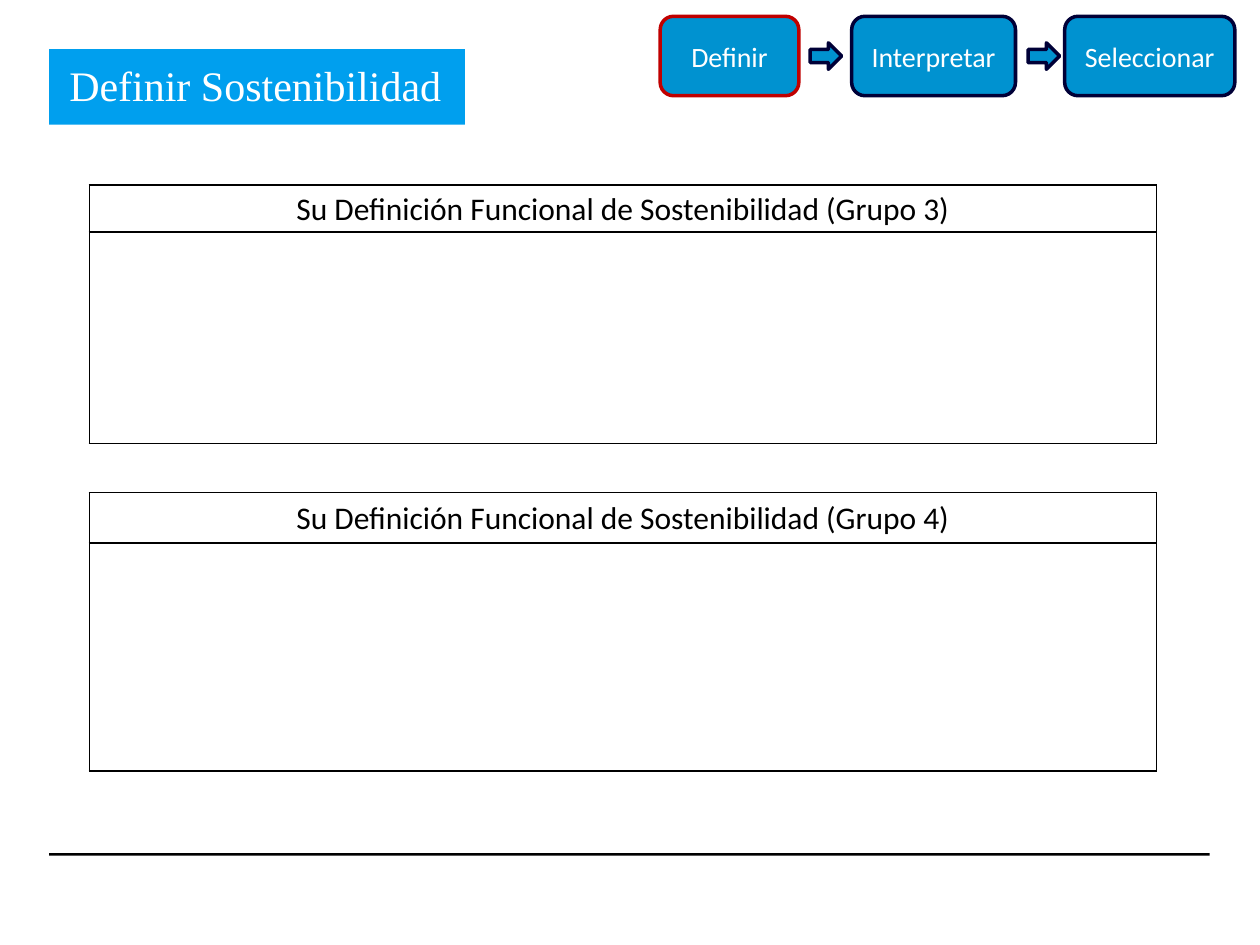
from lxml import etree
from pptx import Presentation
from pptx.dml.color import RGBColor
from pptx.enum.shapes import MSO_SHAPE
from pptx.enum.text import MSO_ANCHOR, PP_ALIGN
from pptx.oxml.ns import qn
from pptx.util import Inches, Pt

RECT = MSO_SHAPE.RECTANGLE
ROUNDED = MSO_SHAPE.ROUNDED_RECTANGLE
ARROW = MSO_SHAPE.RIGHT_ARROW
MIDDLE = MSO_ANCHOR.MIDDLE
CENTER = PP_ALIGN.CENTER

BLACK = RGBColor(0x00, 0x00, 0x00)
WHITE = RGBColor(0xFF, 0xFF, 0xFF)
TITLE_BLUE = RGBColor(0x00, 0x9F, 0xEE)
STEP_BLUE = RGBColor(0x00, 0x92, 0xD0)
NAVY = RGBColor(0x00, 0x00, 0x37)
RED = RGBColor(0xC0, 0x00, 0x00)


def add_box(kind, left, top, width, height, fill, line=None):
    sp = s.shapes.add_shape(kind, Inches(left), Inches(top), Inches(width), Inches(height))
    sp.shadow.inherit = False
    sp.fill.solid()
    sp.fill.fore_color.rgb = fill
    if line is None:
        sp.line.fill.background()
    else:
        sp.line.color.rgb = line
        sp.line.width = Pt(2)
    return sp


def set_borders(cell, color, width):
    tc_pr = cell._tc.get_or_add_tcPr()
    for i, side in enumerate(("lnL", "lnR", "lnT", "lnB")):
        ln = etree.Element(qn(f"a:{side}"), w=str(width))
        fill = etree.SubElement(ln, qn("a:solidFill"))
        etree.SubElement(fill, qn("a:srgbClr"), val=str(color))
        tc_pr.insert(i, ln)


prs = Presentation()
prs.slide_width = Inches(10)
prs.slide_height = Inches(7.5)
s = prs.slides.add_slide(prs.slide_layouts[6])

# Footer rule and title
add_box(RECT, 0.39, 6.77, 9.21, 0.02, BLACK)
title = add_box(RECT, 0.39, 0.39, 3.3, 0.6, TITLE_BLUE)
tf = title.text_frame
tf.word_wrap = False
tf.vertical_anchor = MSO_ANCHOR.TOP
tf.margin_left = tf.margin_right = Inches(0.16)
tf.margin_top = Inches(0.08)
tf.margin_bottom = Inches(0.12)
p = tf.paragraphs[0]
p.text = "Definir Sostenibilidad"
p.alignment = PP_ALIGN.LEFT
p.font.name = "Times New Roman"
p.font.size = Pt(24)
p.font.color.rgb = WHITE

# One definition table per group: header row above an empty answer row
for group, top, row_heights in ((3, 1.47, (0.37, 1.68)), (4, 3.91, (0.4, 1.81))):
    table = s.shapes.add_table(
        2, 1, Inches(0.71), Inches(top), Inches(8.47), Inches(sum(row_heights))
    ).table
    table.first_row = table.horz_banding = False
    for row, height in zip(table.rows, row_heights):
        row.height = Inches(height)
        cell = row.cells[0]
        cell.fill.background()
        set_borders(cell, BLACK, Pt(1))
    header = table.cell(0, 0)
    header.vertical_anchor = MIDDLE
    header.margin_left = header.margin_right = Inches(0.07)
    header.margin_top = header.margin_bottom = 0
    p = header.text_frame.paragraphs[0]
    p.text = f"Su Definición Funcional de Sostenibilidad (Grupo {group})"
    p.alignment = CENTER
    p.line_spacing = 1.07
    p.font.name = "Calibri"
    p.font.size = Pt(18)
    p.font.bold = False
    p.font.color.rgb = BLACK

# Process steps, the current one outlined in red
for step, left, width, outline in (
    ("Definir", 5.24, 1.1, RED),
    ("Interpretar", 6.76, 1.3, NAVY),
    ("Seleccionar", 8.45, 1.35, NAVY),
):
    sp = add_box(ROUNDED, left, 0.13, width, 0.63, STEP_BLUE, outline)
    tf = sp.text_frame
    tf.word_wrap = True
    tf.vertical_anchor = MIDDLE
    p = tf.paragraphs[0]
    p.text = step
    p.alignment = CENTER
    p.font.name = "Calibri"
    p.font.size = Pt(16)
    p.font.color.rgb = WHITE

for left in (6.43, 8.16):
    add_box(ARROW, left, 0.34, 0.25, 0.21, STEP_BLUE, NAVY)

prs.save("out.pptx")
